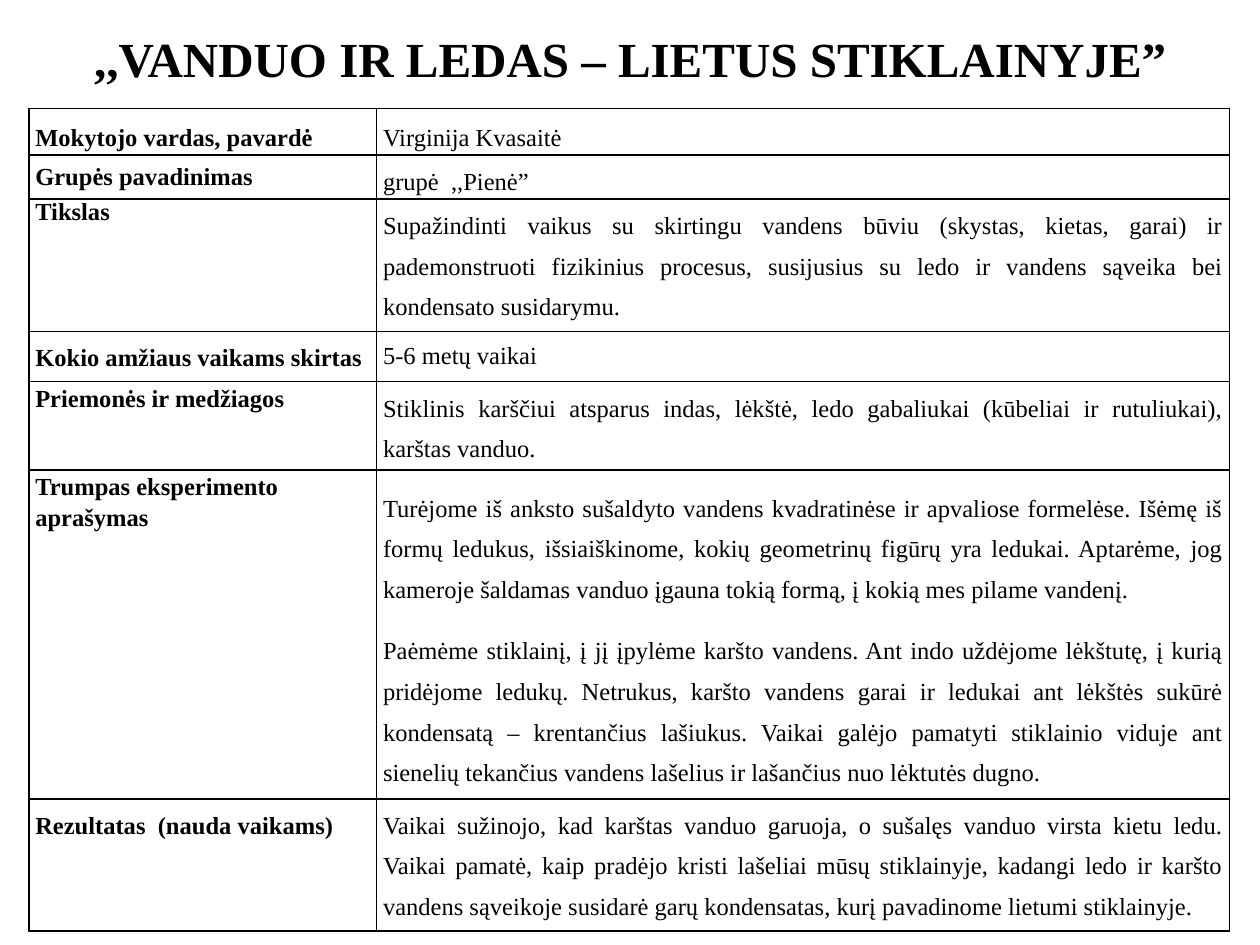
from lxml.etree import SubElement
from pptx import Presentation
from pptx.dml.color import RGBColor
from pptx.enum.text import MSO_ANCHOR as Anchor, PP_ALIGN as Align
from pptx.oxml.ns import qn
from pptx.util import Inches, Pt

COLORS = {"text": "000000", "border": "000000"}
FONT = "Times New Roman"
TITLE = ",,VANDUO IR LEDAS – LIETUS STIKLAINYJE”"
TOP, MIDDLE = Anchor.TOP, Anchor.MIDDLE
LEFT, JUSTIFY = Align.LEFT, Align.JUSTIFY

# Row height, then label and answer: paragraphs, anchor, alignment, line spacing
ROWS = [
    (0.37, (["Mokytojo vardas, pavardė"], MIDDLE, LEFT, 1.5),
     (["Virginija Kvasaitė"], MIDDLE, LEFT, 1.5)),
    (0.35, (["Grupės pavadinimas"], MIDDLE, LEFT, 1.0),
     (["grupė  ,,Pienė”"], TOP, LEFT, 1.5)),
    (1.05, (["Tikslas"], TOP, LEFT, 1.0),
     (["Supažindinti vaikus su skirtingu vandens būviu (skystas, kietas, garai) ir "
       "pademonstruoti fizikinius procesus, susijusius su ledo ir vandens sąveika bei "
       "kondensato susidarymu."], TOP, JUSTIFY, 1.5)),
    (0.4, (["Kokio amžiaus vaikams skirtas"], MIDDLE, LEFT, 1.15),
     (["5-6 metų vaikai"], MIDDLE, JUSTIFY, 1.0)),
    (0.7, (["Priemonės ir medžiagos"], TOP, LEFT, 1.15),
     (["Stiklinis karščiui atsparus indas, lėkštė, ledo gabaliukai (kūbeliai ir "
       "rutuliukai), karštas vanduo."], TOP, JUSTIFY, 1.5)),
    (2.61, (["Trumpas eksperimento aprašymas"], TOP, LEFT, 1.15),
     (["Turėjome iš anksto sušaldyto vandens kvadratinėse ir apvaliose formelėse. Išėmę "
       "iš formų ledukus, išsiaiškinome, kokių geometrinų figūrų yra ledukai. Aptarėme, "
       "jog kameroje šaldamas vanduo įgauna tokią formą, į kokią mes pilame vandenį.",
       "Paėmėme stiklainį, į jį įpylėme karšto vandens. Ant indo uždėjome lėkštutę, į "
       "kurią pridėjome ledukų. Netrukus, karšto vandens garai ir ledukai ant lėkštės "
       "sukūrė kondensatą – krentančius lašiukus. Vaikai galėjo pamatyti stiklainio "
       "viduje ant sienelių tekančius vandens lašelius ir lašančius nuo lėktutės dugno."],
      MIDDLE, JUSTIFY, 1.5)),
    (1.05, (["Rezultatas  (nauda vaikams)"], TOP, JUSTIFY, 1.5),
     (["Vaikai sužinojo, kad karštas vanduo garuoja, o sušalęs vanduo virsta kietu ledu. "
       "Vaikai pamatė, kaip pradėjo kristi lašeliai mūsų stiklainyje, kadangi ledo ir "
       "karšto vandens sąveikoje susidarė garų kondensatas, kurį pavadinome lietumi "
       "stiklainyje."], TOP, JUSTIFY, 1.5)),
]
COLUMNS = (2.76, 6.77)
TABLE_LEFT, TABLE_TOP = 0.23, 0.86


def style_font(font, size, bold):
    font.name, font.size, font.bold = FONT, Pt(size), bold
    font.color.rgb = RGBColor.from_string(COLORS["text"])


def add_borders(cell):
    properties = cell._tc.get_or_add_tcPr()
    for side in ("a:lnL", "a:lnR", "a:lnT", "a:lnB"):
        line = SubElement(properties, qn(side), w=str(Pt(1)))
        fill = SubElement(line, qn("a:solidFill"))
        SubElement(fill, qn("a:srgbClr"), val=COLORS["border"])


def fill_cell(cell, content, bold):
    texts, anchor, alignment, spacing = content
    cell.vertical_anchor = anchor
    cell.margin_left = cell.margin_right = Inches(0.05)
    cell.margin_top = cell.margin_bottom = 0
    add_borders(cell)
    cell.fill.background()
    frame = cell.text_frame
    for index, text in enumerate(texts):
        paragraph = frame.add_paragraph() if index else frame.paragraphs[0]
        paragraph.text = text
        paragraph.alignment = alignment
        paragraph.line_spacing = spacing
        paragraph.space_before = Pt(12 if index else 0)
        style_font(paragraph.font, 14, bold)


def main():
    presentation = Presentation()
    presentation.slide_width, presentation.slide_height = Inches(10), Inches(7.5)
    slide = presentation.slides.add_slide(presentation.slide_layouts[5])

    # Title
    title = slide.shapes.title
    title.left, title.top, title.width, title.height = 0, 0, Inches(10), Inches(0.92)
    title.text_frame.text = TITLE
    title.text_frame.vertical_anchor = MIDDLE
    paragraph = title.text_frame.paragraphs[0]
    paragraph.alignment = Align.CENTER
    style_font(paragraph.font, 28, True)

    # Experiment table
    heights = [row[0] for row in ROWS]
    table = slide.shapes.add_table(
        len(ROWS), len(COLUMNS), Inches(TABLE_LEFT), Inches(TABLE_TOP),
        Inches(sum(COLUMNS)), Inches(sum(heights))).table
    table.first_row = table.horz_banding = False
    for column, width in zip(table.columns, COLUMNS):
        column.width = Inches(width)
    for row, (height, label, answer) in zip(table.rows, ROWS):
        row.height = Inches(height)
        fill_cell(row.cells[0], label, True)
        fill_cell(row.cells[1], answer, False)

    presentation.save("out.pptx")


if __name__ == "__main__":
    main()
